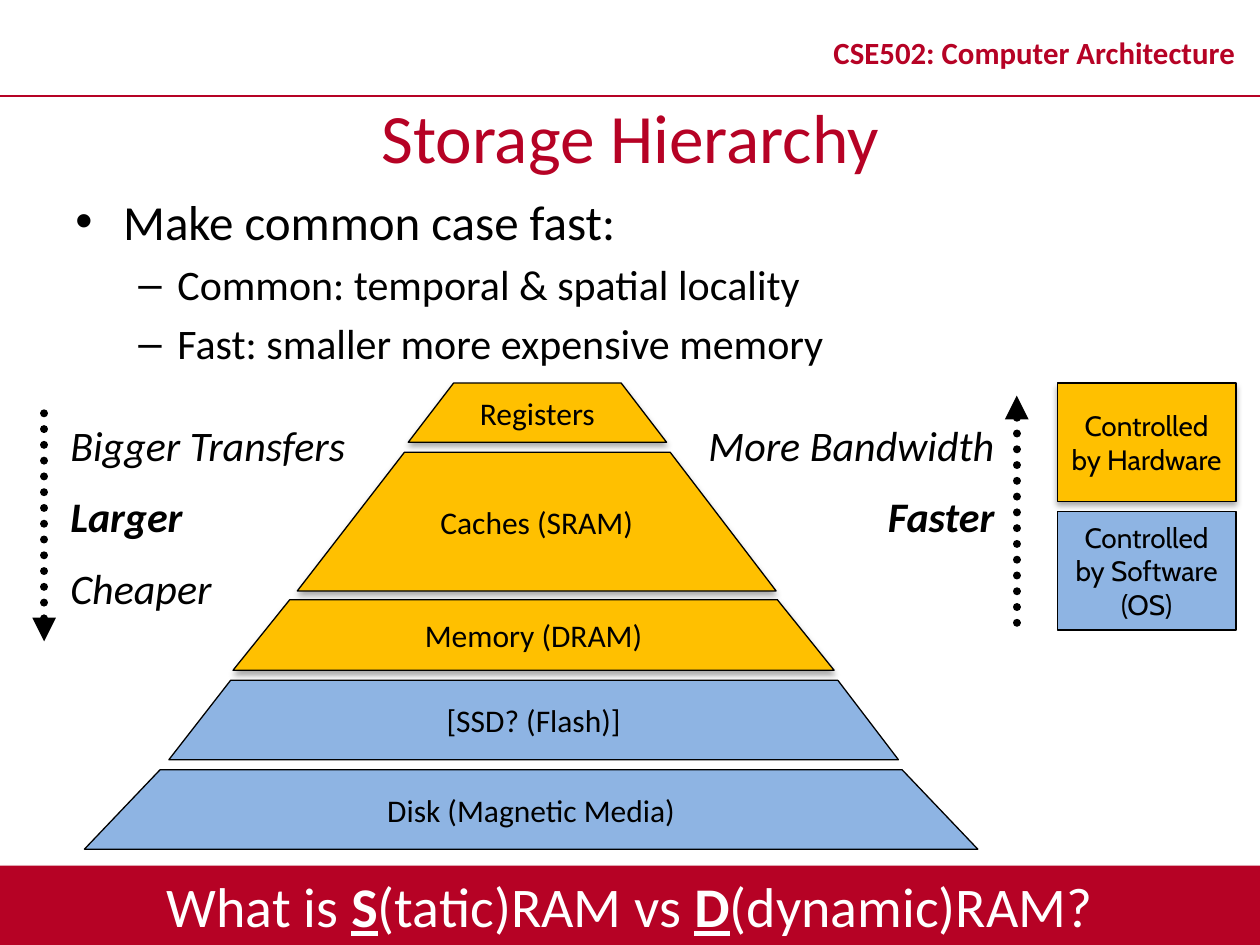
"""Build the Storage Hierarchy slide."""
from lxml.etree import SubElement
from pptx import Presentation
from pptx.dml.color import RGBColor
from pptx.enum.dml import MSO_LINE
from pptx.enum.shapes import MSO_CONNECTOR, MSO_SHAPE
from pptx.enum.text import MSO_ANCHOR, PP_ALIGN
from pptx.oxml.ns import qn
from pptx.util import Inches, Pt

RED, GOLD, BLUE, BLACK, WHITE = "B60225", "FFC000", "8EB4E3", "000000", "FFFFFF"
LEFT, MID, RIGHT = PP_ALIGN.LEFT, PP_ALIGN.CENTER, PP_ALIGN.RIGHT


def tint(part, color):
    if hasattr(part, "solid"):
        part.solid()
        part = part.fore_color
    else:
        part = part.color
    part.rgb = RGBColor.from_string(color)


def write(shape, lines, size, color=BLACK, align=MID, face="Calibri", anchor=MSO_ANCHOR.MIDDLE):
    frame = shape.text_frame
    frame.word_wrap = True
    frame.vertical_anchor = anchor
    for i, line in enumerate(lines):
        para = frame.paragraphs[0] if i == 0 else frame.add_paragraph()
        para.text = line
        para.alignment = align
        para.font.size = Pt(size)
        para.font.name = face
        tint(para.font, color)
    return frame.paragraphs


deck = Presentation()
deck.slide_width, deck.slide_height = Inches(10), Inches(7.5)
slide = deck.slides.add_slide(deck.slide_layouts[6])
shapes = slide.shapes

bar = shapes.add_shape(MSO_SHAPE.RECTANGLE, 0, Inches(6.87), Inches(10), Inches(0.63))
bar.line.fill.background()
para = write(bar, [""], 32, WHITE)[0]
for text in ["What is ", "S", "(tatic)RAM vs ", "D", "(dynamic)RAM?"]:
    run = para.add_run()
    run.text = text
    if len(text) == 1:
        run.font.bold = run.font.underline = True

head = shapes.add_textbox(Inches(6.42), Inches(0.13), Inches(3.58), Inches(0.63))
para = write(head, ["CSE502: Computer Architecture"], 17.6, RED)[0]
para.font.bold = True
para.line_spacing = 0.8

title = shapes.add_textbox(0, Inches(0.76), Inches(10), Inches(0.63))
write(title, ["Storage Hierarchy"], 39.6, RED)

body = shapes.add_textbox(Inches(0.5), Inches(1.47), Inches(9), Inches(1.5))
frame = body.text_frame
frame.word_wrap = True
points = [
    ("Make common case fast:", 0, "•", 28, 0.38, 0.38),
    ("Common: temporal & spatial locality", 1, "–", 24, 0.81, 0.31),
    ("Fast: smaller more expensive memory", 1, "–", 24, 0.81, 0.31),
]
for i, (text, level, mark, size, margin, hang) in enumerate(points):
    para = frame.paragraphs[0] if i == 0 else frame.add_paragraph()
    para.text = text
    para.level = level
    if i:
        para.space_before = Pt(size * 0.2)
    props = para._p.get_or_add_pPr()
    props.set("marL", str(Inches(margin)))
    props.set("indent", str(-Inches(hang)))
    SubElement(props, qn("a:buFont"), typeface="Arial")
    SubElement(props, qn("a:buChar"), char=mark)
    para.font.size = Pt(size)
    para.font.name = "Calibri"
    tint(para.font, BLACK)

blocks = [(bar, RED, (35, 3.1, 1.8))]
keys = [("Controlled by Hardware", 3.04, GOLD), ("Controlled by Software (OS)", 4.06, BLUE)]
for text, top, color in keys:
    key = shapes.add_shape(
        MSO_SHAPE.RECTANGLE, Inches(8.39), Inches(top), Inches(1.42), Inches(0.94))
    write(key, [text], 16, face="Cabin")
    blocks.append((key, color, (32, 3.5, 2.2)))

tiers = [
    ("Registers", 3.04, 3.51, (3.24, 3.6, 4.93, 5.29), GOLD),
    ("Caches (SRAM)", 3.59, 4.69, (2.36, 3.21, 5.32, 6.16), GOLD),
    ("Memory (DRAM)", 4.76, 5.32, (1.85, 2.3, 6.17, 6.62), GOLD),
    ("[SSD? (Flash)]", 5.4, 6.03, (1.34, 1.83, 6.65, 7.13), BLUE),
    ("Disk (Magnetic Media)", 6.11, 6.74, (0.67, 1.27, 7.16, 7.76), BLUE),
]
for text, top, base, across, color in tiers:
    spots = [(Inches(x), Inches(y)) for x, y in zip(across, (base, top, top, base))]
    form = shapes.build_freeform(*spots[0])
    form.add_line_segments(spots[1:], close=True)
    tier = form.convert_to_shape()
    write(tier, [text], 18)
    blocks.append((tier, color, (32, 3.5, 2.2)))

for block, color, (alpha, blur, drop) in blocks:
    tint(block.fill, color)
    block.shadow.inherit = False
    if block is not bar:
        tint(block.line.fill, BLACK)
        block.line.width = Pt(0.75)
    if color != BLUE:
        effects = block._element.spPr.find(qn("a:effectLst"))
        shade = SubElement(
            effects, qn("a:outerShdw"), blurRad=str(Pt(blur)), dist=str(Pt(drop)),
            dir="5400000", algn="t", rotWithShape="0")
        tone = SubElement(shade, qn("a:srgbClr"), val=BLACK)
        SubElement(tone, qn("a:alpha"), val=str(alpha * 1000))

notes = [
    (["Bigger Transfers", "Larger", "Cheaper"], 0.46, 2.73, 1.72, LEFT),
    (["More Bandwidth", "Faster"], 5.24, 2.75, 1.11, RIGHT),
]
for lines, left, width, height, align in notes:
    note = shapes.add_textbox(Inches(left), Inches(3.28), Inches(width), Inches(height))
    paras = write(note, lines, 24, align=align, anchor=MSO_ANCHOR.TOP)
    for i, para in enumerate(paras):
        para.font.italic = True
        para.font.bold = i == 1
        if i:
            para.space_before = Pt(12)

rules = [
    (0, 0.76, 10, 0.76, RED, 1, None),
    (0.35, 3.28, 0.35, 5.09, BLACK, 4.5, "a:tailEnd"),
    (8.07, 3.14, 8.07, 5.04, BLACK, 4.5, "a:headEnd"),
]
for x1, y1, x2, y2, color, width, tip in rules:
    rule = shapes.add_connector(
        MSO_CONNECTOR.STRAIGHT, Inches(x1), Inches(y1), Inches(x2), Inches(y2))
    tint(rule.line.fill, color)
    rule.line.width = Pt(width)
    if tip:
        rule.line.dash_style = MSO_LINE.ROUND_DOT
        stroke = rule.line._get_or_add_ln()
        stroke.set("cap", "rnd")
        SubElement(stroke, qn(tip), type="triangle")
    SubElement(rule._element.spPr, qn("a:effectLst"))

deck.save("out.pptx")
